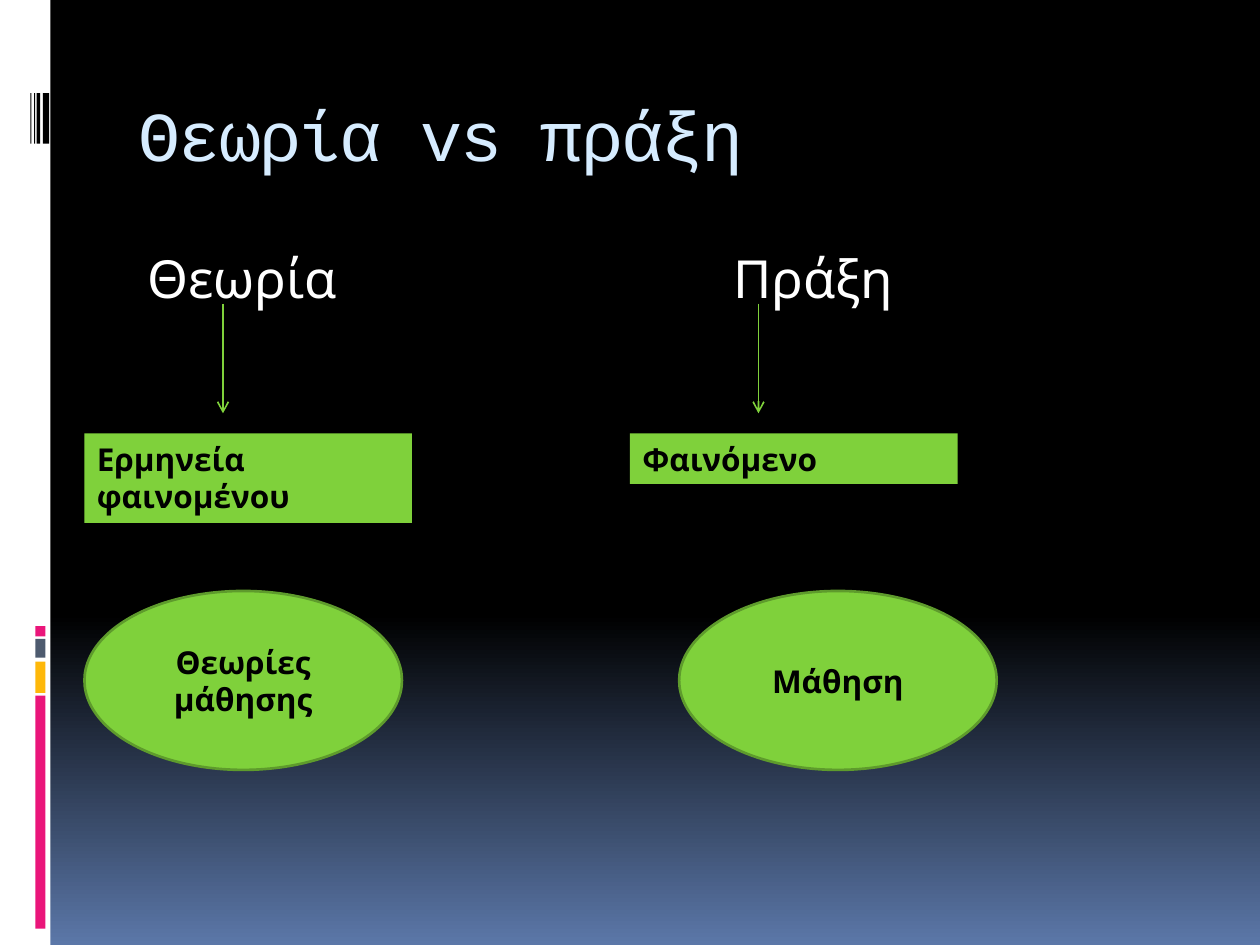
import copy

import pptx
import pptx.dml.color
import pptx.enum.shapes
import pptx.enum.text
import pptx.oxml.ns
import pptx.util
from lxml import etree

Inches = pptx.util.Inches
Pt = pptx.util.Pt
RGBColor = pptx.dml.color.RGBColor
Shape = pptx.enum.shapes.MSO_SHAPE
Anchor = pptx.enum.text.MSO_ANCHOR
Align = pptx.enum.text.PP_ALIGN
qn = pptx.oxml.ns.qn

BLACK = RGBColor(0x00, 0x00, 0x00)
WHITE = RGBColor(0xFF, 0xFF, 0xFF)
STEEL = RGBColor(0x5B, 0x77, 0xA8)
PINK = RGBColor(0xEA, 0x15, 0x7A)
AMBER = RGBColor(0xFE, 0xB8, 0x0A)
SLATE = RGBColor(0x4E, 0x5B, 0x6F)
ICE = RGBColor(0xD6, 0xEC, 0xFF)
GREEN = RGBColor(0x7F, 0xD1, 0x3B)
DARK_GREEN = RGBColor(0x5E, 0x9B, 0x2C)

HEADING_LEFT = 1.07
HEADING_TAB = 4.65
COLOR_BARS = [(5.52, 1.85, PINK), (5.25, 0.25, AMBER), (5.07, 0.15, SLATE), (4.97, 0.08, PINK)]
BARCODE = [(0.34, 0.05), (0.29, 0.03), (0.27, 0.01), (0.24, 0.01)]
COLUMNS = [
    (1.77, 0.67, 0.71, "Ερμηνεία φαινομένου", 0.67, "Θεωρίες μάθησης"),
    (6.02, 5, 0.4, "Φαινόμενο", 5.39, "Μάθηση"),
]


def paint_background(page):
    fill = page.background.fill
    fill.gradient()
    fill.gradient_angle = 270
    first = fill.gradient_stops[0]
    first.color.rgb = BLACK
    first.position = 0
    last = fill.gradient_stops[1]
    last.color.rgb = STEEL
    last.position = 1
    stops = page.background._cSld.find(".//" + qn("a:gsLst"))
    middle = copy.deepcopy(stops[0])
    middle.set("pos", "65000")
    stops.insert(1, middle)


def add_block(page, kind, left, top, width, height, color):
    block = page.shapes.add_shape(kind, Inches(left), Inches(top), Inches(width), Inches(height))
    block.shadow.inherit = False
    block.fill.solid()
    block.fill.fore_color.rgb = color
    block.line.fill.background()
    return block


def style_font(font, name, size, color, bold=False):
    font.name = name
    font.size = Pt(size)
    font.color.rgb = color
    font.bold = bold


def write_label(block, text, align, anchor):
    frame = block.text_frame
    frame.word_wrap = True
    frame.vertical_anchor = anchor
    para = frame.paragraphs[0]
    para.text = text
    para.alignment = align
    style_font(para.font, "Cabin", 18, BLACK, bold=True)


def add_arrow(page, x, top, bottom):
    arrow = page.shapes.add_connector(
        pptx.enum.shapes.MSO_CONNECTOR.STRAIGHT, Inches(x), Inches(top), Inches(x), Inches(bottom)
    )
    arrow.line.color.rgb = GREEN
    arrow.line.width = Pt(0.94)
    etree.SubElement(arrow.line._get_or_add_ln(), qn("a:tailEnd"), type="arrow")
    etree.SubElement(arrow._element.spPr, qn("a:effectLst"))


def add_side_band(page):
    add_block(page, Shape.RECTANGLE, 0, 0, 0.4, 7.5, WHITE)
    for top, height, color in COLOR_BARS:
        add_block(page, Shape.RECTANGLE, 0.28, top, 0.08, height, color)
    for left, width in BARCODE:
        add_block(page, Shape.RECTANGLE, left, 0.74, width, 0.4, BLACK)


def write_title(page, text):
    title = page.shapes.title
    title.left, title.top = Inches(1), Inches(0.56)
    title.width, title.height = Inches(8.5), Inches(1)
    title.text_frame.vertical_anchor = Anchor.MIDDLE
    para = title.text_frame.paragraphs[0]
    para.alignment = Align.LEFT
    span = para.add_run()
    span.text = text
    style_font(span.font, "Courier New", 40, ICE)
    span._r.get_or_add_rPr().set("spc", "-100")


def add_headings(page, left_text, right_text):
    box = page.shapes.add_textbox(Inches(HEADING_LEFT), Inches(1.95), Inches(8.43), Inches(5))
    frame = box.text_frame
    frame.word_wrap = True
    frame.margin_top = 0
    para = frame.paragraphs[0]
    para.text = f"{left_text}\t{right_text}"
    tabs = etree.SubElement(para._p.get_or_add_pPr(), qn("a:tabLst"))
    etree.SubElement(tabs, qn("a:tab"), pos=str(Inches(HEADING_TAB)), algn="l")
    style_font(para.font, "Cabin", 30, WHITE)


def add_column(page, arrow_x, box_left, box_height, box_text, oval_left, oval_text):
    add_arrow(page, arrow_x, 2.41, 3.28)
    box = add_block(page, Shape.RECTANGLE, box_left, 3.44, 2.6, box_height, GREEN)
    write_label(box, box_text, Align.LEFT, Anchor.TOP)
    oval = add_block(page, Shape.OVAL, oval_left, 4.69, 2.52, 1.42, GREEN)
    oval.line.color.rgb = DARK_GREEN
    oval.line.width = Pt(1.5)
    write_label(oval, oval_text, Align.CENTER, Anchor.MIDDLE)


def main():
    deck = pptx.Presentation()
    deck.slide_width, deck.slide_height = Inches(10), Inches(7.5)
    page = deck.slides.add_slide(deck.slide_layouts[5])
    paint_background(page)
    add_side_band(page)
    write_title(page, "Θεωρία vs πράξη")
    add_headings(page, "Θεωρία", "Πράξη")
    for column in COLUMNS:
        add_column(page, *column)
    deck.save("out.pptx")


if __name__ == "__main__":
    main()
